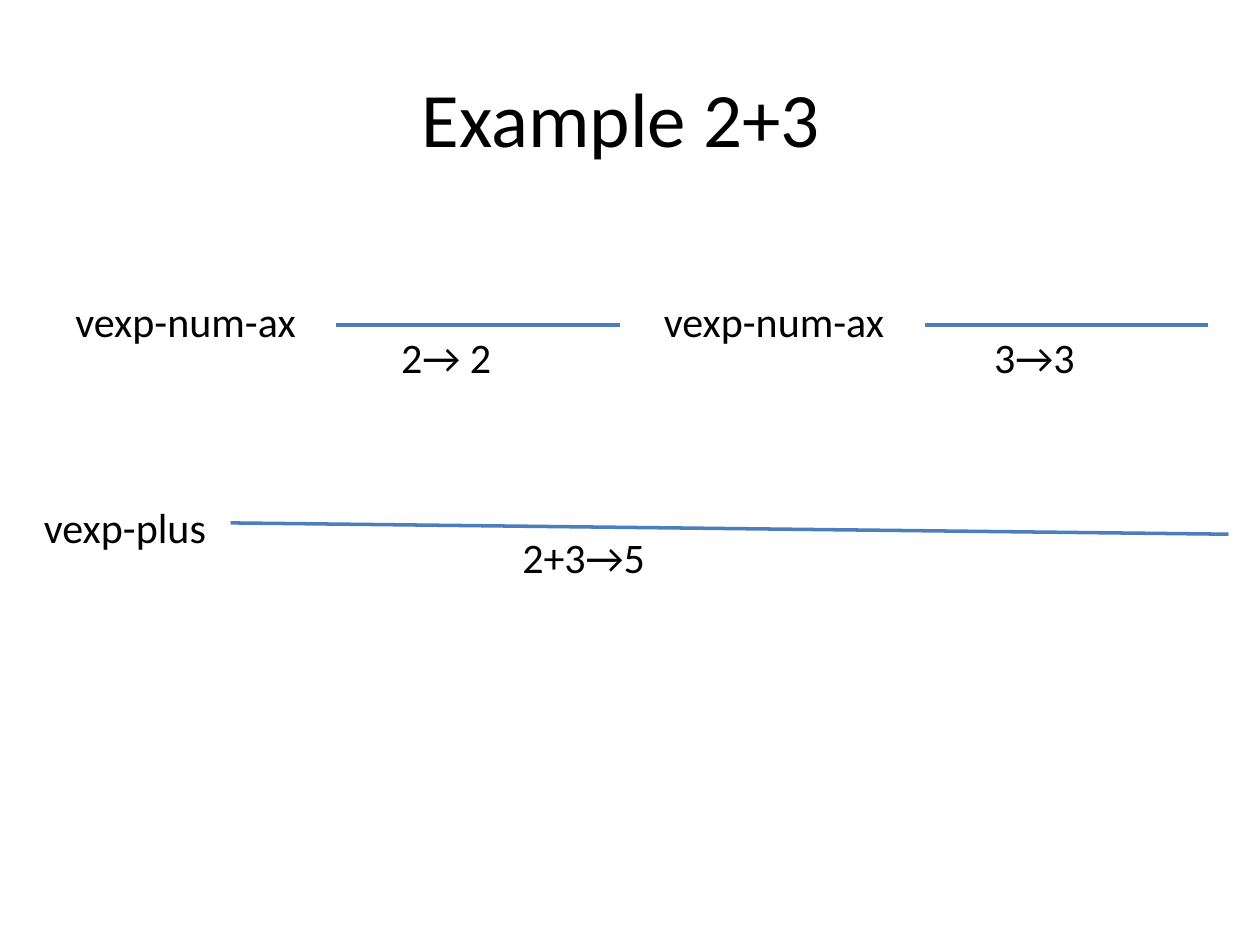
from dataclasses import dataclass

from pptx import Presentation
from pptx.dml.color import RGBColor
from pptx.enum.shapes import MSO_CONNECTOR
from pptx.enum.text import MSO_ANCHOR, MSO_AUTO_SIZE, PP_ALIGN
from pptx.oxml.ns import qn
from pptx.util import Inches, Pt
from lxml.etree import SubElement

BLACK = RGBColor(0x00, 0x00, 0x00)
RULE_BLUE = RGBColor(0x4B, 0x7E, 0xBC)
FONT = "Calibri"
SLIDE_W, SLIDE_H = 10, 7.5
LINE_H = 0.5


@dataclass
class RuleLayout:
    """Offsets in inches from the top left corner of an inference rule."""
    name_w: float
    bar_x: float
    bar_y: float
    bar_w: float
    bar_drop: float
    judgement_x: float
    judgement_y: float
    judgement_w: float


AXIOM = RuleLayout(2.33, 2.17, 0.28, 2.25, 0, 1.33, 0.28, 3.42)
PLUS = RuleLayout(1.67, 1.58, 0.22, 7.92, 0.09, 1.46, 0.24, 5.92)


def add_text(shapes, box, text, size=24, align=PP_ALIGN.LEFT):
    label = shapes.add_textbox(*(Inches(v) for v in box))
    frame = label.text_frame
    frame.word_wrap = True
    paragraph = frame.paragraphs[0]
    paragraph.alignment = align
    run = paragraph.add_run()
    run.text = text
    run.font.name = FONT
    run.font.size = Pt(size)
    run.font.color.rgb = BLACK
    return frame


def add_title(slide, box, text):
    frame = add_text(slide.shapes, box, text, 44, PP_ALIGN.CENTER)
    frame.vertical_anchor = MSO_ANCHOR.MIDDLE


def add_bar(shapes, x, y, width, drop):
    bar = shapes.add_connector(
        MSO_CONNECTOR.STRAIGHT,
        Inches(x), Inches(y), Inches(x + width), Inches(y + drop))
    bar.line.color.rgb = RULE_BLUE
    bar.line.width = Pt(2)
    SubElement(bar._element.spPr, qn("a:effectLst"))


def add_inference_rule(slide, left, top, layout, name, judgement):
    """Group a rule name, its bar and the judgement under the bar."""
    shapes = slide.shapes.add_group_shape().shapes
    add_bar(shapes, left + layout.bar_x, top + layout.bar_y,
            layout.bar_w, layout.bar_drop)
    judgement_box = (left + layout.judgement_x, top + layout.judgement_y,
                     layout.judgement_w, LINE_H)
    name_box = (left, top, layout.name_w, LINE_H)
    for frame in (
            add_text(shapes, judgement_box, judgement, align=PP_ALIGN.CENTER),
            add_text(shapes, name_box, name)):
        frame.auto_size = MSO_AUTO_SIZE.SHAPE_TO_FIT_TEXT


def main():
    deck = Presentation()
    deck.slide_width, deck.slide_height = Inches(SLIDE_W), Inches(SLIDE_H)
    slide = deck.slides.add_slide(deck.slide_layouts[6])

    add_title(slide, (0.05 * SLIDE_W, 0.04 * SLIDE_H, 0.9 * SLIDE_W, 1.25),
              "Example 2+3 ")
    for left, judgement in ((0.5, "2→ 2"), (5.17, "3→3")):
        add_inference_rule(slide, left, 2.3, AXIOM, "vexp-num-ax", judgement)
    add_inference_rule(slide, 0.25, 3.93, PLUS, "vexp-plus", "2+3→5 ")

    deck.save("out.pptx")


if __name__ == "__main__":
    main()
